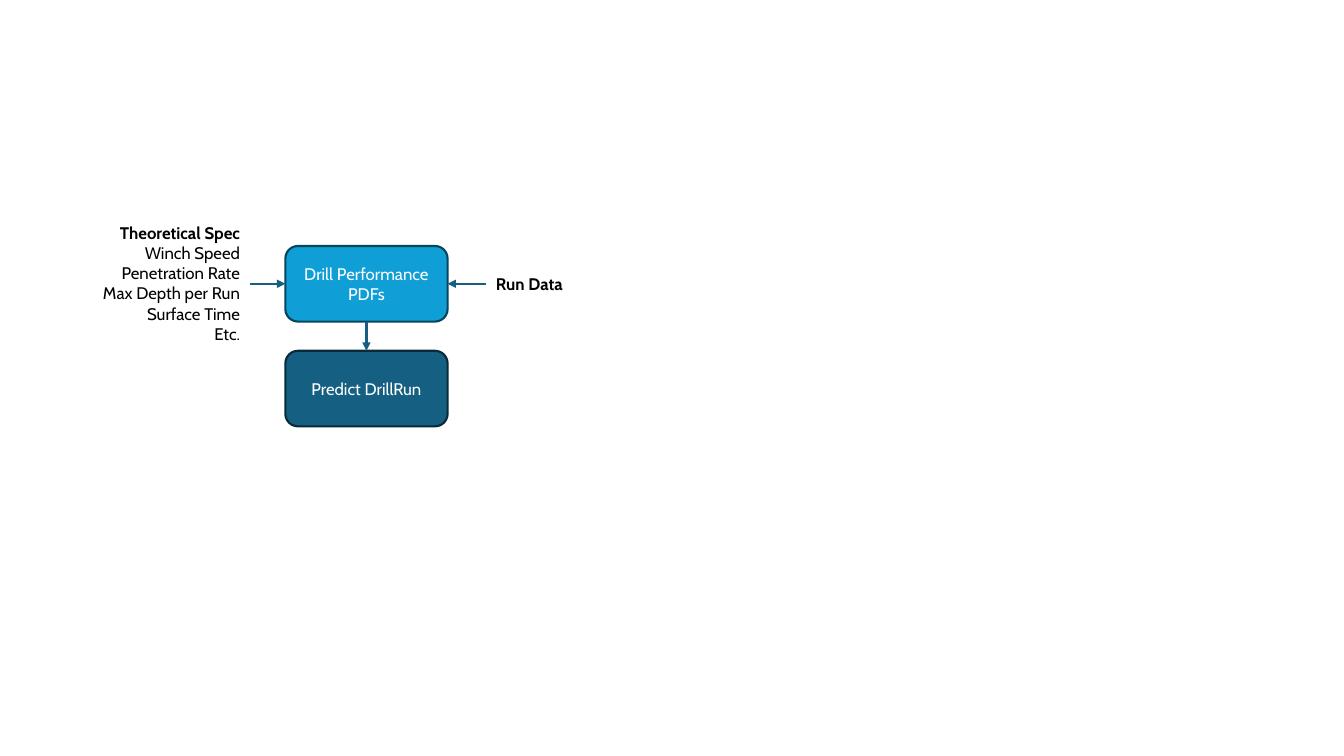
from dataclasses import dataclass

from lxml import etree
from pptx import Presentation
from pptx.dml.color import RGBColor
from pptx.enum.shapes import MSO_CONNECTOR, MSO_SHAPE
from pptx.enum.text import MSO_ANCHOR, MSO_AUTO_SIZE, PP_ALIGN
from pptx.oxml.ns import qn
from pptx.util import Inches, Pt

PROCESS = MSO_SHAPE.FLOWCHART_ALTERNATE_PROCESS
STRAIGHT = MSO_CONNECTOR.STRAIGHT
TOP, MIDDLE = MSO_ANCHOR.TOP, MSO_ANCHOR.MIDDLE
GROW = MSO_AUTO_SIZE.SHAPE_TO_FIT_TEXT
LEFT, CENTER, RIGHT = PP_ALIGN.LEFT, PP_ALIGN.CENTER, PP_ALIGN.RIGHT
SITE_TOP, SITE_LEFT, SITE_BOTTOM, SITE_RIGHT = range(4)


@dataclass(frozen=True)
class Theme:
    font: str = "Cabin"
    text_size: float = 12
    line_width: float = 1.5
    ink: str = "000000"
    paper: str = "FFFFFF"
    blue: str = "0F9ED5"
    blue_edge: str = "07455D"
    teal: str = "156082"
    teal_edge: str = "092A39"


class FlowPage:
    """Draws flow chart elements on one slide in one style."""

    def __init__(self, page, theme):
        self.page = page
        self.theme = theme

    def add_lines(self, frame, lines, color, align, anchor):
        """Fill a text frame with (text, bold) lines."""
        frame.word_wrap = True
        frame.vertical_anchor = anchor
        for index, (text, bold) in enumerate(lines):
            para = frame.add_paragraph() if index else frame.paragraphs[0]
            para.alignment = align
            span = para.add_run()
            span.text = text
            span.font.name = self.theme.font
            span.font.size = Pt(self.theme.text_size)
            span.font.bold = bold
            span.font.color.rgb = RGBColor.from_string(color)

    def process(self, text, left, top, width, height, fill, edge):
        box = self.page.shapes.add_shape(
            PROCESS, Inches(left), Inches(top), Inches(width), Inches(height))
        box.shadow.inherit = False
        box.fill.solid()
        box.fill.fore_color.rgb = RGBColor.from_string(fill)
        box.line.color.rgb = RGBColor.from_string(edge)
        box.line.width = Pt(self.theme.line_width)
        self.add_lines(box.text_frame, [(text, False)], self.theme.paper, CENTER, MIDDLE)
        return box

    def label(self, lines, left, top, width, height, align):
        box = self.page.shapes.add_textbox(
            Inches(left), Inches(top), Inches(width), Inches(height))
        self.add_lines(box.text_frame, lines, self.theme.ink, align, TOP)
        box.text_frame.auto_size = GROW
        return box

    def arrow(self, source, source_site, target, target_site):
        """Join two boxes, with the arrowhead at the target."""
        link = self.page.shapes.add_connector(STRAIGHT, 0, 0, 0, 0)
        link.begin_connect(source, source_site)
        link.end_connect(target, target_site)
        link.line.color.rgb = RGBColor.from_string(self.theme.teal)
        link.line.width = Pt(self.theme.line_width)
        properties = link.element.spPr
        etree.SubElement(properties.find(qn("a:ln")), qn("a:tailEnd"), type="triangle")
        etree.SubElement(properties, qn("a:effectLst"))


def main():
    deck = Presentation()
    deck.slide_width, deck.slide_height = Inches(13.33), Inches(7.5)
    theme = Theme()
    flow = FlowPage(deck.slides.add_slide(deck.slide_layouts[6]), theme)

    # Layout: one column of boxes, inputs centred on the first box
    width, height = 1.61, 0.75
    left, top, step = 2.83, 2.44, 1.04
    middle = top + height / 2
    label_width, spec_height, data_height = 1.6, 1.31, 0.3

    # Process boxes
    performance = flow.process("Drill Performance PDFs", left, top, width, height,
                               theme.blue, theme.blue_edge)
    prediction = flow.process("Predict DrillRun", left, top + step, width, height,
                              theme.teal, theme.teal_edge)

    # Inputs on either side
    run_data = flow.label([("Run Data", True)], 4.82, middle - data_height / 2,
                          label_width, data_height, LEFT)
    details = ["Winch Speed", "Penetration Rate", "Max Depth per Run",
               "Surface Time", "Etc."]
    spec_lines = [("Theoretical Spec", True)] + [(text, False) for text in details]
    theory = flow.label(spec_lines, 0.88, middle - spec_height / 2,
                        label_width, spec_height, RIGHT)

    # Arrows
    flow.arrow(performance, SITE_BOTTOM, prediction, SITE_TOP)
    flow.arrow(run_data, SITE_LEFT, performance, SITE_RIGHT)
    flow.arrow(theory, SITE_RIGHT, performance, SITE_LEFT)

    deck.save("out.pptx")


if __name__ == "__main__":
    main()
